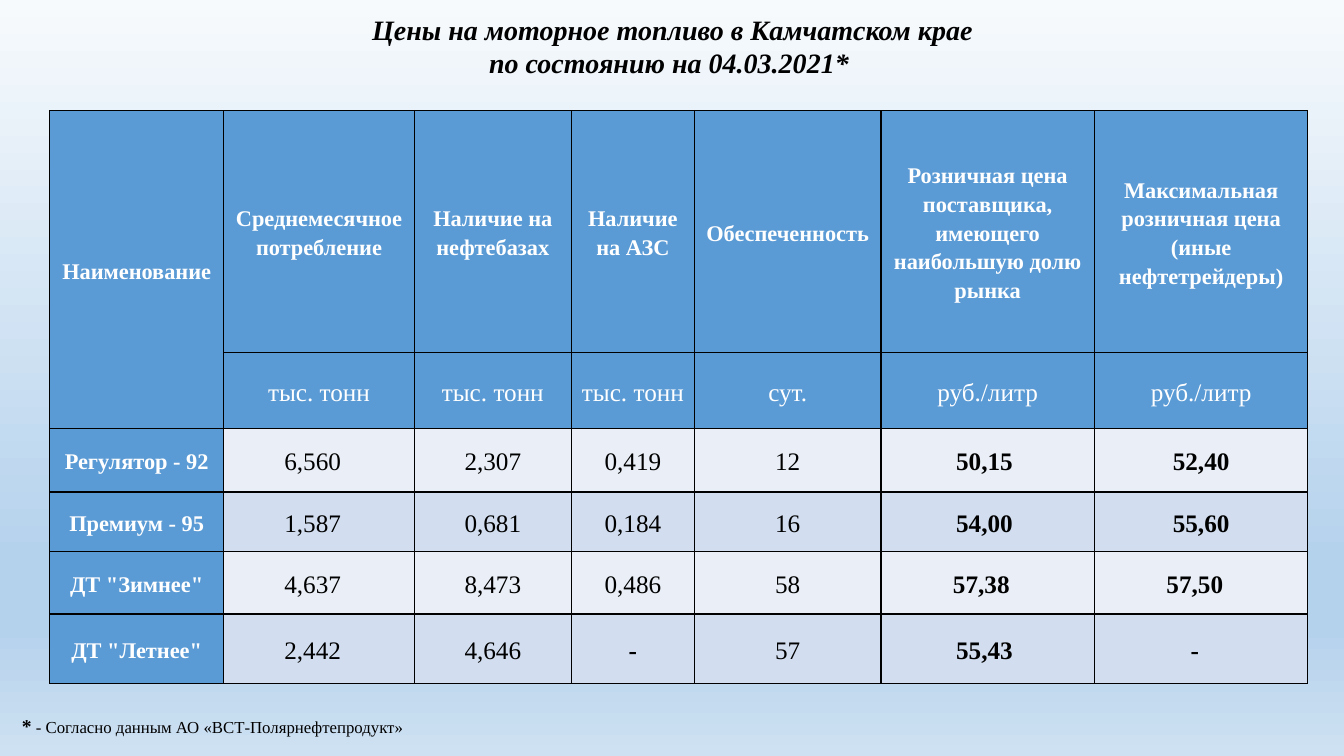
from copy import deepcopy
from lxml import etree
from pptx import Presentation
from pptx import util as u
from pptx.dml.color import RGBColor
from pptx.enum import text
from pptx.oxml import ns

BLUE, LIGHT, MIDDLE = "5B9BD5", "EAEFF7", "D2DEEF"
WHITE, BLACK = "FFFFFF", "000000"


def colour(hex_string):
    return RGBColor.from_string(hex_string)


def add_span(para, words, size, shade=BLACK, bold=False, italic=False):
    span = para.add_run()
    span.text = words
    span.font.name = "Times New Roman"
    span.font.size = u.Pt(size)
    span.font.bold = bold
    span.font.italic = italic
    span.font.color.rgb = colour(shade)


deck = Presentation()
deck.slide_width, deck.slide_height = u.Cm(33.87), u.Cm(19.05)
page = deck.slides.add_slide(deck.slide_layouts[6])

# Background gradient, top to bottom
fill = page.background.fill
fill.gradient()
fill.gradient_angle = 270
stop_list = page.element.find(".//" + ns.qn("a:gsLst"))
for _ in range(2):
    stop_list.append(deepcopy(stop_list[0]))
shades = [(0, "F7FAFD"), (0.74, "B5D2EC"), (0.83, "B5D2EC"), (1, "CEE1F2")]
for stop, (position, shade) in zip(fill.gradient_stops, shades):
    stop.position = position
    stop.color.rgb = colour(shade)

# Fuel table
names = ["Наименование", "Среднемесячное потребление", "Наличие на нефтебазах",
         "Наличие на АЗС", "Обеспеченность",
         "Розничная цена поставщика, имеющего наибольшую долю рынка",
         "Максимальная розничная цена\n(иные нефтетрейдеры)"]
units = ["", "тыс. тонн", "тыс. тонн", "тыс. тонн", "сут.", "руб./литр", "руб./литр"]
fuels = [
    ["Регулятор - 92", "6,560", "2,307", "0,419", "12", "50,15", "52,40"],
    ["Премиум - 95", "1,587", "0,681", "0,184", "16", "54,00", "55,60"],
    ['ДТ "Зимнее"', "4,637", "8,473", "0,486", "58", "57,38", "57,50"],
    ['ДТ "Летнее"', "2,442", "4,646", "-", "57", "55,43", "-"],
]
rows = [names, units] + fuels
widths = [4.39, 4.8, 3.96, 3.1, 4.7, 5.38, 5.38]
heights = [6.1, 1.91, 1.6, 1.5, 1.57, 1.75]
# Extra right inset for values set slightly left of centre
insets = {(row, 1): 0.32 for row in range(2, 6)}
insets |= {(row, 5): 0.16 for row in (2, 3, 5)}
insets |= {(4, 5): 0.32, (4, 6): 0.32, (5, 6): 0.32}

table = page.shapes.add_table(len(rows), len(widths), u.Cm(1.25), u.Cm(2.79),
                              u.Cm(sum(widths)), u.Cm(sum(heights))).table
for column, width in zip(table.columns, widths):
    column.width = u.Cm(width)
for line, height in zip(table.rows, heights):
    line.height = u.Cm(height)
table.cell(0, 0).merge(table.cell(1, 0))

for row, values in enumerate(rows):
    for col, value in enumerate(values):
        cell = table.cell(row, col)
        cell.vertical_anchor = text.MSO_ANCHOR.MIDDLE
        cell.margin_top = cell.margin_bottom = 0
        cell.margin_left = u.Cm(0.18)
        cell.margin_right = u.Cm(0.18 + insets.get((row, col), 0))
        header = row < 2 or col == 0
        label = row == 0 or col == 0
        cell.fill.solid()
        cell.fill.fore_color.rgb = colour(BLUE if header else (LIGHT, MIDDLE)[row % 2])

        # Borders
        properties = cell._tc.get_or_add_tcPr()
        for index, side in enumerate(("lnL", "lnR", "lnT", "lnB")):
            border = etree.Element(ns.qn("a:" + side), w=str(u.Pt(1)))
            solid = etree.SubElement(border, ns.qn("a:solidFill"))
            etree.SubElement(solid, ns.qn("a:srgbClr"), val=BLACK)
            properties.insert(index, border)

        # Text
        if not value:
            continue
        bold = label or (row > 1 and (col > 4 or value == "-"))
        for number, words in enumerate(value.split("\n")):
            frame = cell.text_frame
            para = frame.add_paragraph() if number else frame.paragraphs[0]
            para.alignment = text.PP_ALIGN.CENTER
            para.line_spacing = 1.15
            add_span(para, words, 16 if label else 18, WHITE if header else BLACK, bold)

# Title
box = page.shapes.add_textbox(u.Cm(3.35), u.Cm(0.18), u.Cm(27.2), u.Cm(1.96))
frame = box.text_frame
frame.word_wrap = True
frame.auto_size = text.MSO_AUTO_SIZE.SHAPE_TO_FIT_TEXT
title = ["Цены на моторное топливо в Камчатском крае", "по состоянию на 04.03.2021* "]
for number, words in enumerate(title):
    para = frame.add_paragraph() if number else frame.paragraphs[0]
    para.alignment = text.PP_ALIGN.CENTER
    add_span(para, words, 20, bold=True, italic=True)

# Footnote
box = page.shapes.add_textbox(u.Cm(0.3), u.Cm(17.86), u.Cm(15.19), u.Cm(0.86))
box.text_frame.word_wrap = True
box.text_frame.auto_size = text.MSO_AUTO_SIZE.SHAPE_TO_FIT_TEXT
para = box.text_frame.paragraphs[0]
add_span(para, "*", 14, bold=True)
add_span(para, " - Согласно данным АО «ВСТ-Полярнефтепродукт»", 12)

deck.save("out.pptx")
